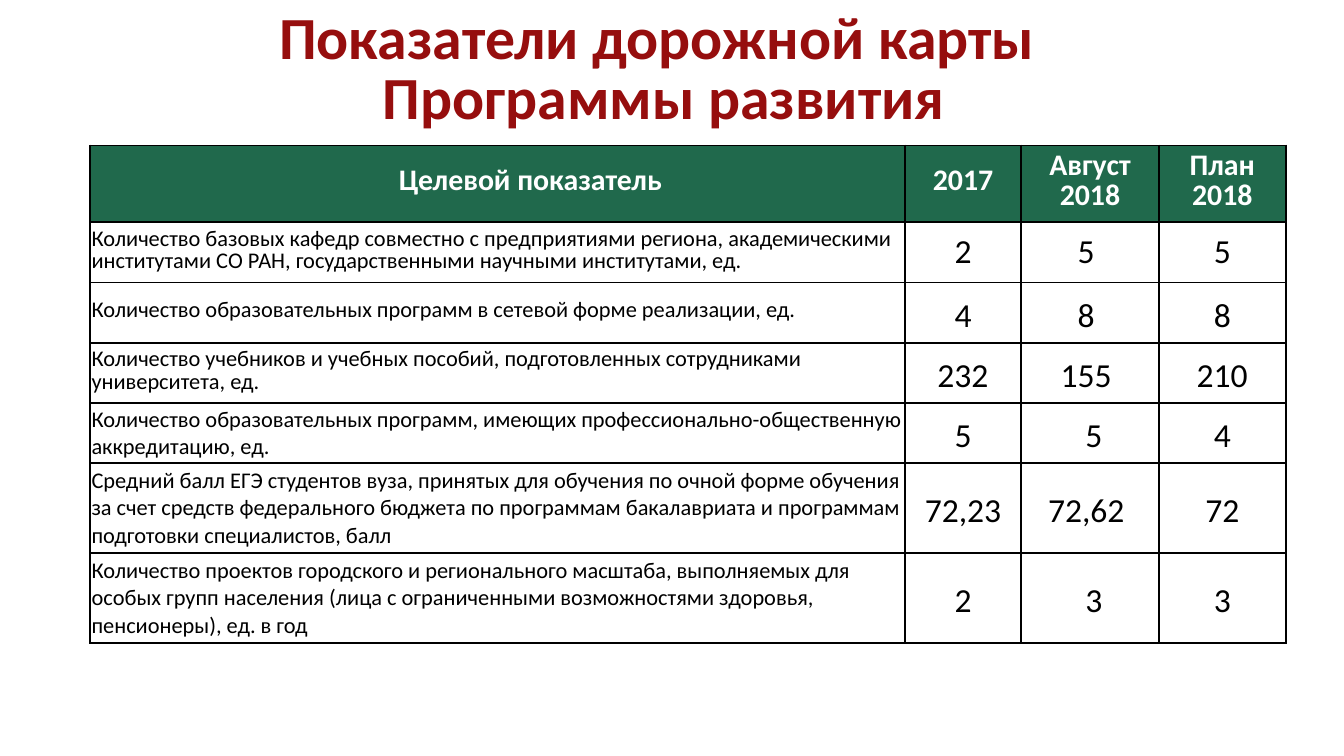
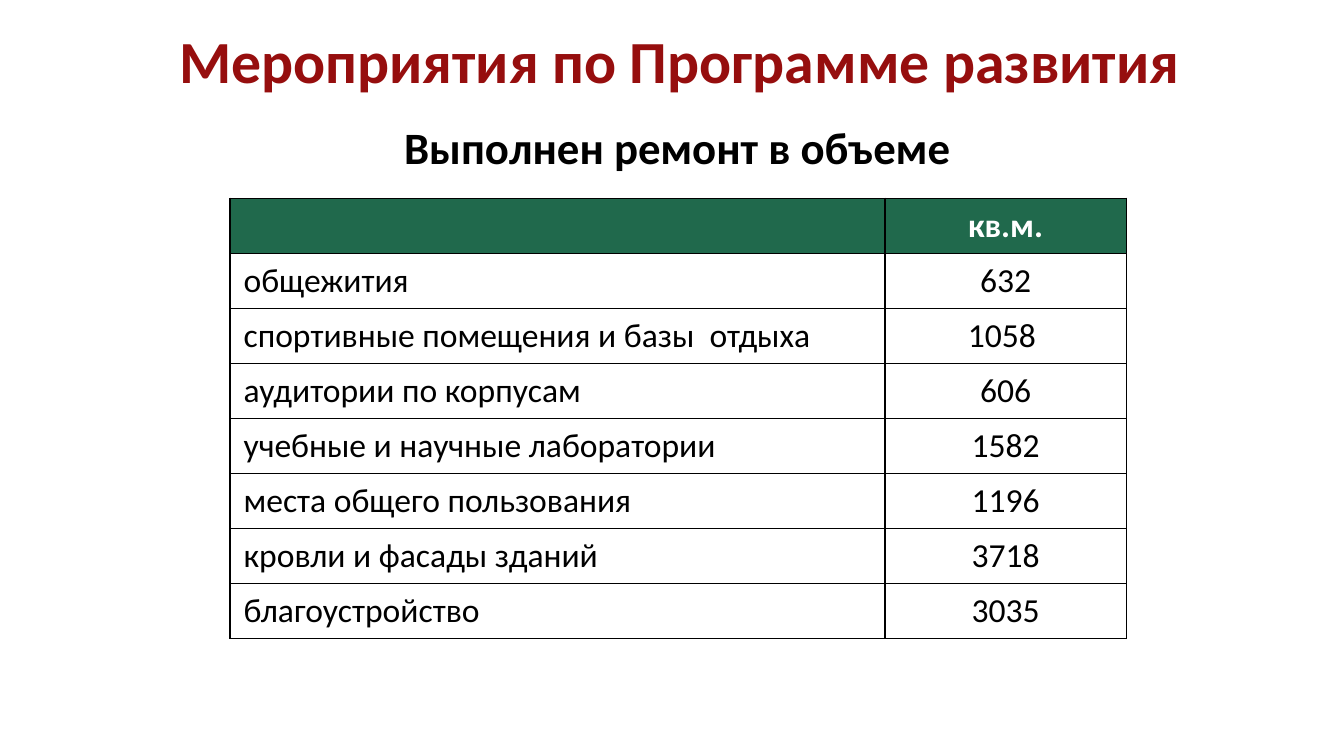
from dataclasses import dataclass

from lxml import etree
from pptx import Presentation
from pptx import util as u
from pptx.dml.color import RGBColor
from pptx.enum import text as t
from pptx.oxml.ns import qn

PLAN_TITLE = "Показатели дорожной карты \nПрограммы развития"
PLAN_HEAD = [["Целевой показатель"], ["2017"], ["Август", "2018"], ["План 2018"]]
# name, values, height in cm, exact name spacing in points, value spacing
PLAN = [
    ("Количество базовых кафедр совместно с предприятиями региона, "
     "академическими институтами СО РАН, государственными научными "
     "институтами, ед.", ("2", "5 ", "5"), 1.14, 12, None),
    ("Количество образовательных программ в сетевой форме реализации, ед.",
     ("4", "8 ", "8"), 1.14, 12, 1.15),
    ("Количество учебников и учебных пособий, подготовленных сотрудниками "
     "университета, ед.", ("232", "155 ", "210"), 1.14, 12, 1.15),
    ("Количество образовательных программ, имеющих "
     "профессионально-общественную аккредитацию, ед.",
     ("5", " 5", "4"), 1.14, None, 1.15),
    ("Средний балл ЕГЭ студентов вуза, принятых для обучения по очной форме "
     "обучения за счет средств федерального бюджета по программам "
     "бакалавриата и программам подготовки специалистов, балл",
     ("72,23", "72,62 ", "72"), 1.7, None, 1.15),
    ("Количество проектов городского и регионального масштаба, выполняемых "
     "для особых групп населения (лица с ограниченными возможностями "
     "здоровья, пенсионеры), ед. в год",
     ("2", " 3", "3"), 1.7, None, 1.15),
]

WORK_TITLE = "Мероприятия по Программе развития"
WORK_SUB = "Выполнен ремонт в объеме"
WORK_UNIT = "кв.м."
WORK = [
    ("общежития", "632"),
    ("спортивные помещения и базы  отдыха", "1058 "),
    ("аудитории по корпусам", "606"),
    ("учебные и научные лаборатории", "1582"),
    ("места общего пользования", "1196"),
    ("кровли и фасады зданий", "3718"),
    ("благоустройство", "3035"),
]


@dataclass(frozen=True)
class Theme:
    font: str = "Calibri"
    red: str = "960E0E"
    green: str = "20694C"
    white: str = "FFFFFF"
    black: str = "000000"
    title: int = 32
    sub: int = 24
    body: int = 18
    head: int = 16
    small: int = 12
    line: int = 1


TH = Theme()
MID = t.PP_ALIGN.CENTER
LEFT = t.PP_ALIGN.LEFT


def write(frame, paras, size, color=TH.black, bold=False, align=MID, gap=None):
    """Fill a frame; a line end inside a paragraph becomes a line break."""
    for n, words in enumerate(paras):
        para = frame.add_paragraph() if n else frame.paragraphs[0]
        para.alignment = align
        if gap:
            para.line_spacing = gap
        for k, part in enumerate(words.split("\n")):
            if k:
                para.add_line_break()
            run = para.add_run()
            run.text = part
            font = run.font
            font.name, font.size, font.bold = TH.font, u.Pt(size), bold
            font.color.rgb = RGBColor.from_string(color)


def label(slide, box, words, size, color, anchor, gap=None):
    frame = slide.shapes.add_textbox(*map(u.Cm, box)).text_frame
    frame.word_wrap = True
    frame.vertical_anchor = anchor
    write(frame, [words], size, color, True, gap=gap)
    return frame


def title(slide, box, words, gap=None):
    label(slide, box, words, TH.title, TH.red, t.MSO_ANCHOR.MIDDLE, gap)


def edge(cell):
    """Draw the four borders of a cell, ahead of its fill."""
    props = cell._tc.get_or_add_tcPr()
    for n, side in enumerate(("lnL", "lnR", "lnT", "lnB")):
        line = etree.Element(qn(f"a:{side}"), w=str(u.Pt(TH.line)))
        fill = etree.SubElement(line, qn("a:solidFill"))
        etree.SubElement(fill, qn("a:srgbClr"), val=TH.black)
        props.insert(n, line)


def grid(slide, left, top, cols, rows, fill=None):
    """Add a table with a green head row and black borders."""
    table = slide.shapes.add_table(
        len(rows), len(cols), u.Cm(left), u.Cm(top),
        u.Cm(sum(cols)), u.Cm(sum(rows))).table
    table.horz_banding = False
    for col, wide in zip(table.columns, cols):
        col.width = u.Cm(wide)
    for n, (row, high) in enumerate(zip(table.rows, rows)):
        row.height = u.Cm(high)
        tint = fill if n else TH.green
        for cell in row.cells:
            if tint:
                cell.fill.solid()
                cell.fill.fore_color.rgb = RGBColor.from_string(tint)
            else:
                cell.fill.background()
            edge(cell)
    return table


def inset(cell, side):
    cell.margin_left = cell.margin_right = u.Cm(side)
    cell.margin_top = cell.margin_bottom = 0
    cell.vertical_anchor = t.MSO_ANCHOR.MIDDLE


def plan(slide):
    rows = [1.45] + [item[2] for item in PLAN]
    table = grid(slide, 1.7, 2.75, (15.4, 2.2, 2.6, 2.4), rows)
    for n, paras in enumerate(PLAN_HEAD):
        cell = table.cell(0, n)
        inset(cell, 0.15)
        write(cell.text_frame, paras, TH.head, TH.white, True,
              gap=u.Pt(TH.head))
    first = table.cell(0, 0).text_frame.paragraphs[0]
    first._p.get_or_add_pPr().set("indent", str(u.Cm(1.25)))
    for r, (name, vals, _, exact, gap) in enumerate(PLAN, 1):
        for c, words in enumerate((name, *vals)):
            cell = table.cell(r, c)
            inset(cell, 0.03)
            if c:
                write(cell.text_frame, [words], TH.body, gap=gap)
            else:
                write(cell.text_frame, [words], TH.small, align=LEFT,
                      gap=exact and u.Pt(exact))
    title(slide, (0.3, 0.15, 24.5, 2.4), PLAN_TITLE, u.Pt(TH.title))


def work(slide):
    title(slide, (0, 0.08, 25.7, 2.08), WORK_TITLE)
    sub = label(slide, (6.1, 2.13, 13.4, 1.27), WORK_SUB, TH.sub, TH.black,
                t.MSO_ANCHOR.TOP)
    sub.auto_size = t.MSO_AUTO_SIZE.SHAPE_TO_FIT_TEXT
    rows = [1.04] * (len(WORK) + 1)
    table = grid(slide, 4.35, 3.75, (12.37, 4.57), rows, TH.white)
    write(table.cell(0, 1).text_frame, [WORK_UNIT], TH.body, TH.white, True)
    for r, (name, area) in enumerate(WORK, 1):
        write(table.cell(r, 0).text_frame, [name], TH.body, align=LEFT)
        write(table.cell(r, 1).text_frame, [area], TH.body)


def main():
    deck = Presentation()
    deck.slide_width, deck.slide_height = u.Cm(25.4), u.Cm(14.29)
    for build in (plan, work):
        build(deck.slides.add_slide(deck.slide_layouts[6]))
    deck.save("out.pptx")


if __name__ == "__main__":
    main()
